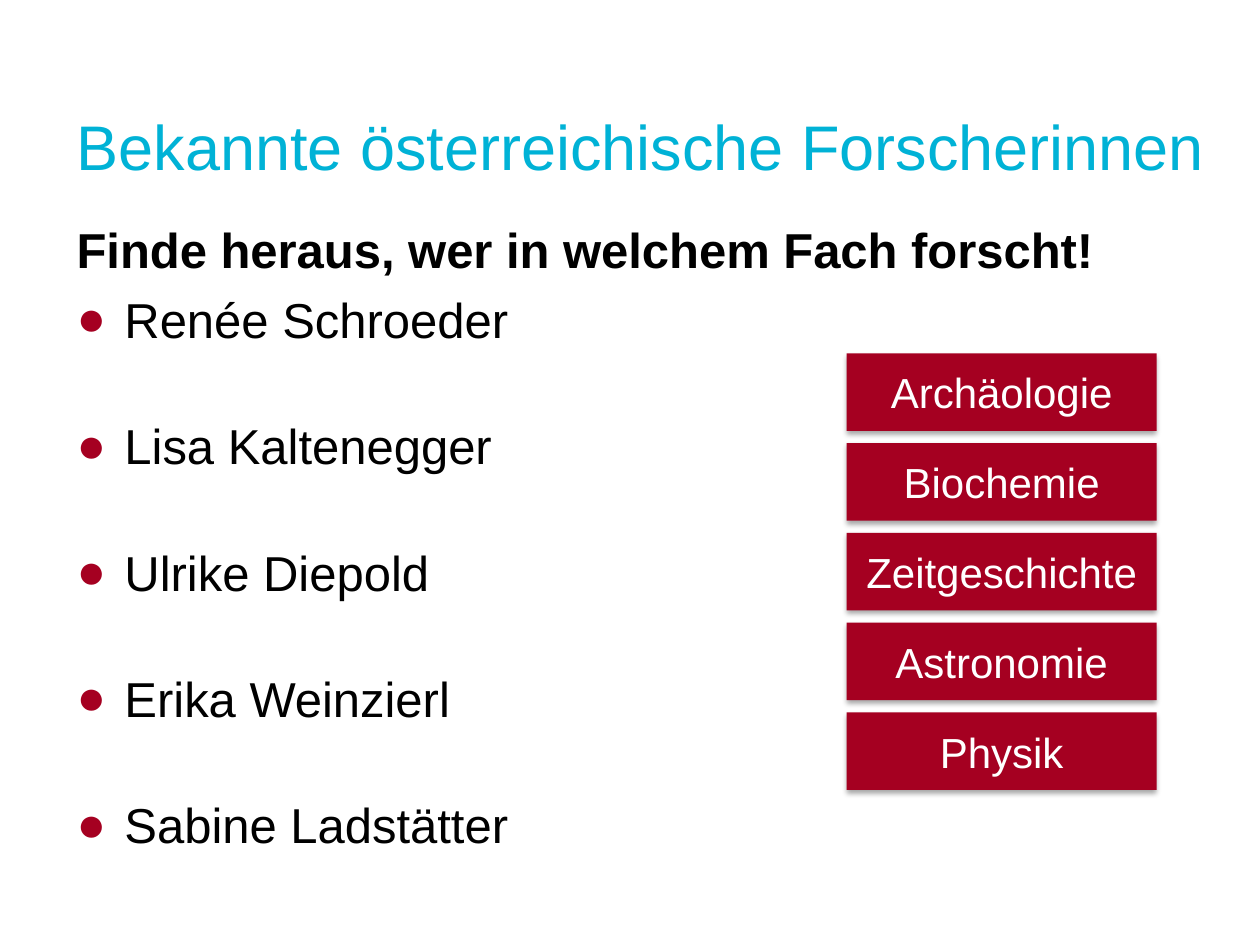
from lxml import etree
from pptx import Presentation
from pptx.dml.color import RGBColor
from pptx.enum.shapes import MSO_SHAPE
from pptx.enum.text import MSO_ANCHOR, MSO_AUTO_SIZE, PP_ALIGN
from pptx.oxml.ns import qn
from pptx.util import Inches, Pt

RECTANGLE = MSO_SHAPE.RECTANGLE
MIDDLE = MSO_ANCHOR.MIDDLE
NO_FIT = MSO_AUTO_SIZE.NONE
LEFT, CENTER = PP_ALIGN.LEFT, PP_ALIGN.CENTER
TITLE_ONLY = 5
WIDTH, HEIGHT = 10, 7.5
FONT = "Arial"
COLORS = {"title": "00B2D6", "text": "000000", "accent": "A50021",
          "label": "FFFFFF", "shadow": "000000"}
RESEARCHERS = ["Renée Schroeder", "Lisa Kaltenegger", "Ulrike Diepold",
               "Erika Weinzierl", "Sabine Ladstätter"]
SUBJECTS = ["Archäologie", "Biochemie", "Zeitgeschichte", "Astronomie", "Physik"]


class MatchingSlide:
    """Styles and places the elements of a matching exercise by shares of the slide."""

    def __init__(self, presentation):
        self.slide = presentation.slides.add_slide(presentation.slide_layouts[TITLE_ONLY])

    def box(self, left, top, width, height):
        return (Inches(left * WIDTH), Inches(top * HEIGHT),
                Inches(width * WIDTH), Inches(height * HEIGHT))

    def set_text(self, paragraph, text, size, color, bold=False, align=LEFT):
        paragraph.text = text
        paragraph.alignment = align
        font = paragraph.font
        font.name, font.size, font.bold = FONT, Pt(size), bold
        font.color.rgb = RGBColor.from_string(COLORS[color])

    def title(self, text, *area):
        shape = self.slide.shapes.title
        shape.left, shape.top, shape.width, shape.height = self.box(*area)
        frame = shape.text_frame
        frame.word_wrap, frame.auto_size = True, NO_FIT
        frame.vertical_anchor = MIDDLE
        self.set_text(frame.paragraphs[0], text, 36, "title")

    def bullet(self, paragraph):
        properties = paragraph._p.get_or_add_pPr()
        properties.set("marL", str(Inches(0.38)))
        properties.set("indent", str(Inches(-0.38)))
        color = etree.SubElement(properties, qn("a:buClr"))
        etree.SubElement(color, qn("a:srgbClr"), val=COLORS["accent"])
        etree.SubElement(properties, qn("a:buFont"), typeface=FONT)
        etree.SubElement(properties, qn("a:buChar"), char="●")

    def question(self, heading, names, *area):
        frame = self.slide.shapes.add_textbox(*self.box(*area)).text_frame
        frame.word_wrap, frame.margin_top = True, Inches(0.12)
        self.set_text(frame.paragraphs[0], heading, 28, "text", bold=True)
        for index, name in enumerate(names):
            paragraph = frame.add_paragraph()
            self.bullet(paragraph)
            paragraph.space_before = Pt(38.6 if index else 6.4)
            self.set_text(paragraph, name, 28, "text")

    def drop_shadow(self, shape):
        shape.shadow.inherit = False
        effects = shape._element.spPr.find(qn("a:effectLst"))
        shadow = etree.SubElement(effects, qn("a:outerShdw"), blurRad=str(Pt(3.1)),
                                  dist=str(Pt(1.8)), dir="5400000", rotWithShape="0")
        color = etree.SubElement(shadow, qn("a:srgbClr"), val=COLORS["shadow"])
        etree.SubElement(color, qn("a:alpha"), val="35000")

    def card(self, text, *area):
        shape = self.slide.shapes.add_shape(RECTANGLE, *self.box(*area))
        shape.fill.solid()
        shape.fill.fore_color.rgb = RGBColor.from_string(COLORS["accent"])
        shape.line.fill.background()
        self.drop_shadow(shape)
        frame = shape.text_frame
        frame.word_wrap, frame.vertical_anchor = True, MIDDLE
        self.set_text(frame.paragraphs[0], text, 24, "label", align=CENTER)

    def cards(self, texts, left, top, width, height, pitch):
        for row, text in enumerate(texts):
            self.card(text, left, top + row * pitch, width, height)


def main():
    presentation = Presentation()
    presentation.slide_width, presentation.slide_height = Inches(WIDTH), Inches(HEIGHT)
    slide = MatchingSlide(presentation)
    slide.title("Bekannte österreichische Forscherinnen", 0.051, 0.07, 0.921, 0.168)
    slide.question("Finde heraus, wer in welchem Fach forscht!", RESEARCHERS,
                   0.051, 0.216, 0.9, 0.704)
    slide.cards(SUBJECTS, 0.672, 0.374, 0.246, 0.082, 0.095)
    presentation.save("out.pptx")


if __name__ == "__main__":
    main()
